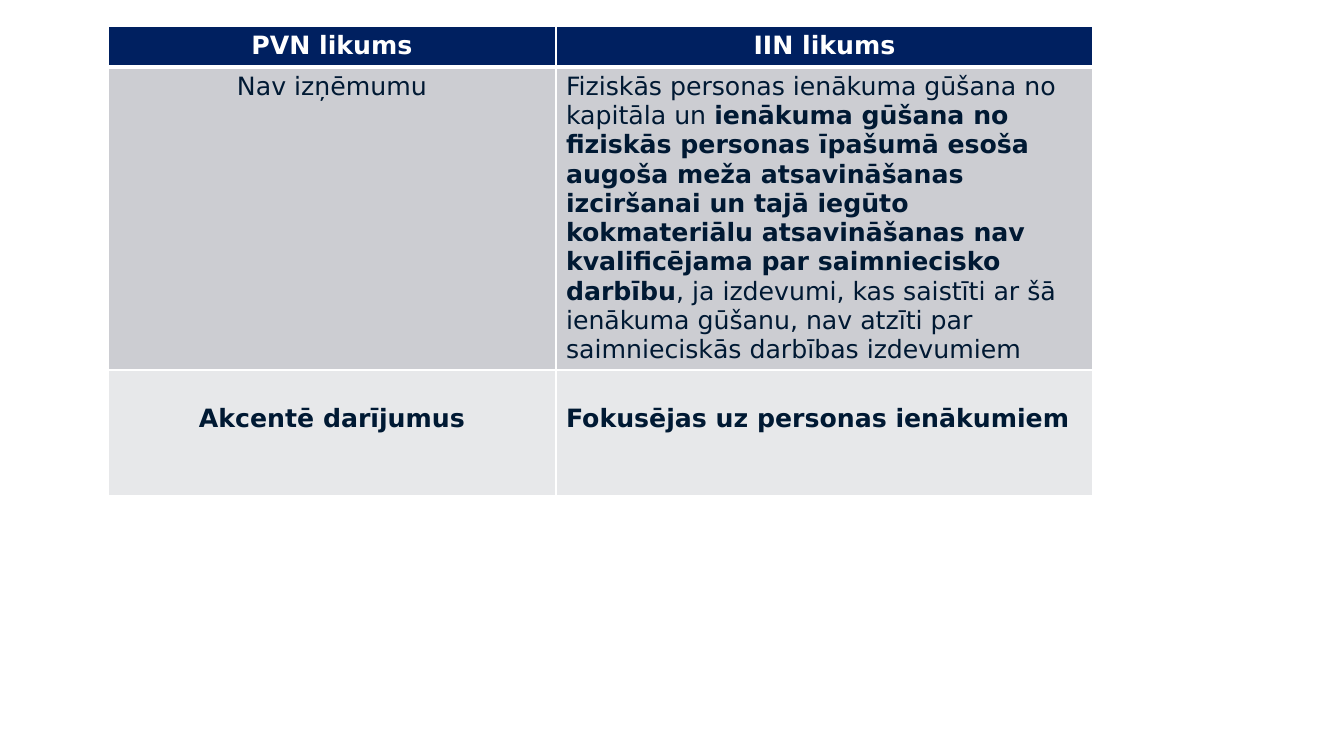
import dataclasses

import pptx
import pptx.dml.color
import pptx.enum.text
import pptx.oxml
import pptx.oxml.ns
import pptx.util


@dataclasses.dataclass(frozen=True)
class Theme:
    font: str = "DejaVu Sans"
    text_size: int = 18
    ink: str = "001933"
    header_ink: str = "FFFFFF"
    header_fill: str = "002060"
    exception_fill: str = "CCCDD2"
    focus_fill: str = "E7E8EA"
    border: str = "FFFFFF"
    border_width: int = 1
    header_rule_width: int = 3


THEME = Theme()
PX_PER_INCH = 100.8
CENTER = pptx.enum.text.PP_ALIGN.CENTER
LEFT = pptx.enum.text.PP_ALIGN.LEFT

LAW_ROWS = [
    {
        "height": 41, "fill": THEME.header_fill, "ink": THEME.header_ink,
        "top_margin": 5, "bottom_rule": THEME.header_rule_width,
        "cells": [
            (CENTER, [("PVN likums", True)]),
            (CENTER, [("IIN likums", True)]),
        ],
    },
    {
        "height": 303, "fill": THEME.exception_fill, "ink": THEME.ink,
        "top_margin": 5, "bottom_rule": THEME.border_width,
        "cells": [
            (CENTER, [("Nav izņēmumu", False)]),
            (LEFT, [
                ("Fiziskās personas ienākuma gūšana no kapitāla un ", False),
                ("ienākuma gūšana no fiziskās personas īpašumā esoša augoša "
                 "meža atsavināšanas izciršanai un tajā iegūto kokmateriālu "
                 "atsavināšanas nav kvalificējama par saimniecisko darbību", True),
                (", ja izdevumi, kas saistīti ar šā ienākuma gūšanu, nav "
                 "atzīti par saimnieciskās darbības izdevumiem", False),
            ]),
        ],
    },
    {
        "height": 126, "fill": THEME.focus_fill, "ink": THEME.ink,
        "top_margin": 34, "bottom_rule": THEME.border_width,
        "cells": [
            (CENTER, [("Akcentē darījumus", True)]),
            (LEFT, [("Fokusējas uz personas ienākumiem", True)]),
        ],
    },
]


def px(length):
    return pptx.util.Emu(round(length * pptx.util.Inches(1) / PX_PER_INCH))


def rgb(value):
    return pptx.dml.color.RGBColor.from_string(value)


def set_borders(cell, widths):
    properties = cell._tc.get_or_add_tcPr()
    for position, (side, width) in enumerate(widths.items()):
        border = pptx.oxml.parse_xml(
            f'<a:{side} {pptx.oxml.ns.nsdecls("a")} w="{pptx.util.Pt(width)}">'
            f'<a:solidFill><a:srgbClr val="{THEME.border}"/></a:solidFill>'
            f'</a:{side}>'
        )
        properties.insert(position, border)


def fill_cell(cell, law_row, alignment, passages, top_rule):
    cell.fill.solid()
    cell.fill.fore_color.rgb = rgb(law_row["fill"])
    cell.margin_top = px(law_row["top_margin"])
    paragraph = cell.text_frame.paragraphs[0]
    paragraph.alignment = alignment
    for wording, bold in passages:
        run = paragraph.add_run()
        run.text = wording
        run.font.name = THEME.font
        run.font.size = pptx.util.Pt(THEME.text_size)
        run.font.bold = bold
        run.font.color.rgb = rgb(law_row["ink"])
    set_borders(cell, {
        "lnL": THEME.border_width,
        "lnR": THEME.border_width,
        "lnT": top_rule,
        "lnB": law_row["bottom_rule"],
    })


def add_law_comparison(slide, left, top, width, pvn_width):
    height = sum(law_row["height"] for law_row in LAW_ROWS)
    comparison = slide.shapes.add_table(
        len(LAW_ROWS), 2, px(left), px(top), px(width), px(height)
    ).table
    for column, column_width in zip(comparison.columns, (pvn_width, width - pvn_width)):
        column.width = px(column_width)
    top_rule = THEME.border_width
    for row_index, law_row in enumerate(LAW_ROWS):
        comparison.rows[row_index].height = px(law_row["height"])
        for column_index, (alignment, passages) in enumerate(law_row["cells"]):
            cell = comparison.cell(row_index, column_index)
            fill_cell(cell, law_row, alignment, passages, top_rule)
        top_rule = law_row["bottom_rule"]


def main():
    presentation = pptx.Presentation()
    presentation.slide_width = px(1344)
    presentation.slide_height = px(756)
    slide = presentation.slides.add_slide(presentation.slide_layouts[6])
    add_law_comparison(slide, left=108, top=26, width=985, pvn_width=448)
    presentation.save("out.pptx")


if __name__ == "__main__":
    main()
